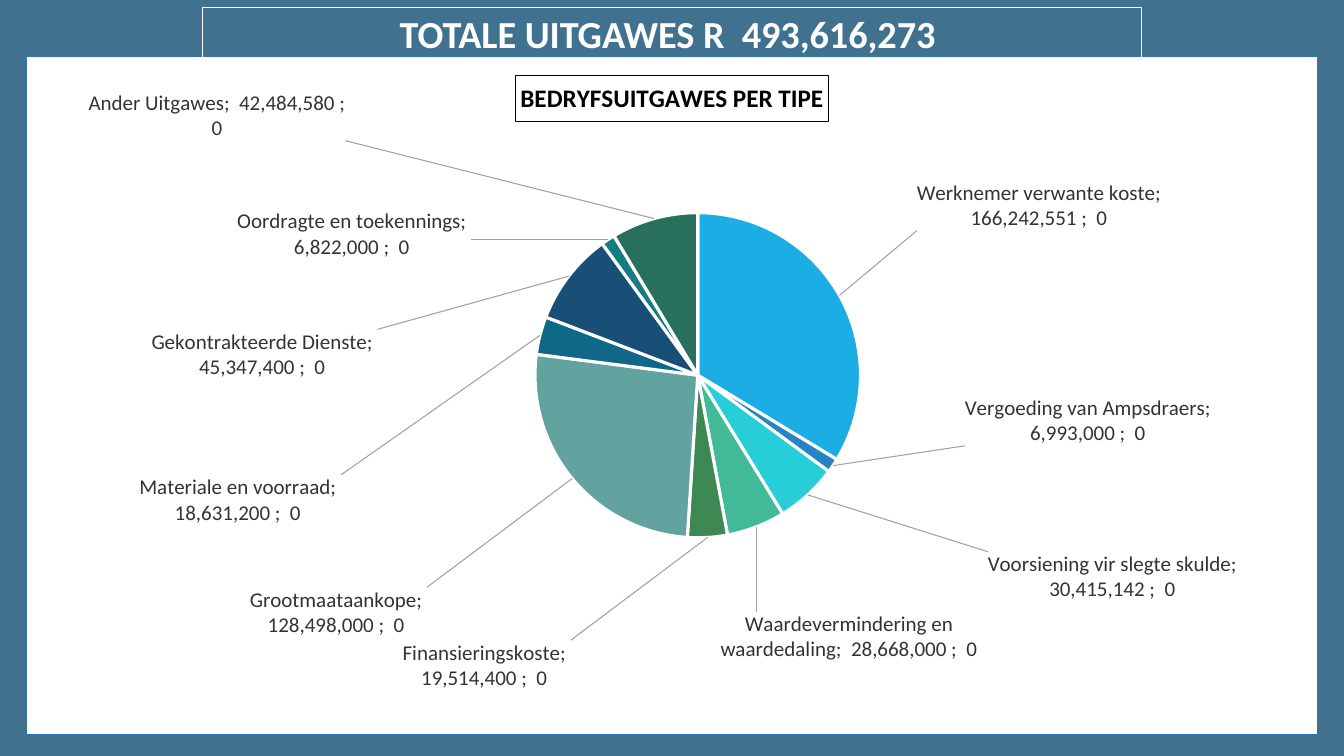
from math import cos, pi, sin

from pptx import Presentation
from pptx.chart.data import CategoryChartData
from pptx.dml.color import RGBColor as Rgb
from pptx.enum.chart import XL_CHART_TYPE as Kind, XL_LABEL_POSITION as Pos
from pptx.enum.shapes import MSO_SHAPE as Shape
from pptx.enum.text import MSO_ANCHOR as Anchor, PP_ALIGN as Align
from pptx.oxml import parse_xml
from pptx.oxml.ns import qn
from pptx.util import Inches, Pt

HEAD = "TOTALE UITGAWES R  493,616,273 "
TITLE = "BEDRYFSUITGAWES PER TIPE"
FONT = "Calibri"
FORMAT = '" "#,##0" "'
COLORS = {"back": "407290", "white": "FFFFFF", "black": "000000",
          "edge": "2E75B6", "label": "333333", "leader": "A0A0A0"}

# name, amount, slice colour, label corner nearest the pie (inches)
COSTS = [
    ("Werknemer verwante koste", 166242551, "1CADE4", (9.04, 2.31)),
    ("Vergoeding van Ampsdraers", 6993000, "2683C6", (9.52, 3.87)),
    ("Voorsiening vir slegte skulde", 30415142, "27CED7", (9.76, 5.41)),
    ("Waardevermindering en waardedaling", 28668000, "42BA97", (7.13, 5.99)),
    ("Finansieringskoste", 19514400, "3E8853", (4.83, 6.27)),
    ("Grootmaataankope", 128498000, "62A39F", (4.3, 5.77)),
    ("Materiale en voorraad", 18631200, "106889", (3.46, 5.22)),
    ("Gekontrakteerde Dienste", 45347400, "174F77", (3.81, 3.8)),
    ("Oordragte en toekennings", 6822000, "177C81", (4.72, 2.62)),
    ("Ander Uitgawes", 42484580, "28705B", (3.45, 1.45)),
]
LEFT, TOP, WIDTH, HEIGHT = 0.26, 0.56, 12.81, 6.73
PLOT = {"x": 0.2, "y": 0.23, "w": 0.64, "h": 0.48}
MID = (6.93, 3.71)
RADIUS = 1.6

NS = ('xmlns:c="http://schemas.openxmlformats.org/drawingml/2006/chart" '
      'xmlns:a="http://schemas.openxmlformats.org/drawingml/2006/main"')


def color(key):
    return Rgb.from_string(COLORS.get(key, key))


def paint(item, fill, line, width):
    item.fill.solid()
    item.fill.fore_color.rgb = color(fill)
    item.line.color.rgb = color(line)
    item.line.width = Pt(width)


def style(font, size, key, bold=False):
    font.name, font.size, font.bold = FONT, Pt(size), bold
    font.color.rgb = color(key)


def outline(key, width):
    return (f'<a:ln w="{Pt(width)}"><a:solidFill><a:srgbClr val="{COLORS[key]}"/>'
            f'</a:solidFill></a:ln>')


def place(x, y):
    return (f'<c:layout><c:manualLayout><c:x val="{x:.4f}"/><c:y val="{y:.4f}"/>'
            f'</c:manualLayout></c:layout>')


def add_head(slide):
    box = slide.shapes.add_shape(Shape.RECTANGLE, Inches(2.01), Inches(0.07),
                                 Inches(9.31), Inches(0.58))
    box.shadow.inherit = False
    box.fill.background()
    box.line.color.rgb = color("white")
    box.line.width = Pt(0.75)
    box.text_frame.vertical_anchor = Anchor.MIDDLE
    para = box.text_frame.paragraphs[0]
    para.text, para.alignment, para.line_spacing = HEAD, Align.CENTER, 0.9
    style(para.font, 27.3, "white", True)


def add_labels(series):
    labels = series.data_labels
    labels.number_format, labels.number_format_is_linked = FORMAT, False
    labels.position = Pos.OUTSIDE_END
    labels.show_value = labels.show_category_name = labels.show_percentage = True
    style(labels.font, 15, "label")
    root = labels._element
    for tag in ("c:separator", "c:showLeaderLines", "c:leaderLines"):
        for old in root.findall(qn(tag)):
            root.remove(old)
    for part in ("<c:separator {}>; </c:separator>",
                 '<c:showLeaderLines {} val="1"/>',
                 "<c:leaderLines {}><c:spPr>" + outline("leader", 0.75)
                 + "</c:spPr></c:leaderLines>"):
        root.append(parse_xml(part.replace("{}", NS)))
    total, done = sum(cost[1] for cost in COSTS), 0
    for i, (_, value, _, (x, y)) in enumerate(COSTS):
        turn = 2 * pi * (done + value / 2) / total
        done += value
        shift = place((x - MID[0] - RADIUS * sin(turn)) / WIDTH,
                      (y - MID[1] + RADIUS * cos(turn)) / HEIGHT)
        root.insert(i, parse_xml(
            f'<c:dLbl {NS}><c:idx val="{i}"/>{shift}<c:dLblPos val="outEnd"/>'
            '<c:showLegendKey val="0"/><c:showVal val="1"/><c:showCatName val="1"/>'
            '<c:showSerName val="0"/><c:showPercent val="1"/>'
            '<c:showBubbleSize val="0"/><c:separator>; </c:separator></c:dLbl>'))


def add_pie(slide):
    data = CategoryChartData(number_format=FORMAT)
    data.categories = [cost[0] for cost in COSTS]
    data.add_series("Uitgawes", [cost[1] for cost in COSTS])
    chart = slide.shapes.add_chart(Kind.PIE, Inches(LEFT), Inches(TOP),
                                   Inches(WIDTH), Inches(HEIGHT), data).chart
    style(chart.font, 10, "black")
    chart.has_legend = False
    chart.has_title = True
    title = chart.chart_title
    para = title.text_frame.paragraphs[0]
    para.text = TITLE
    style(para.font, 18, "black", True)
    paint(title.format, "white", "black", 0.75)
    plot = chart.plots[0]
    plot.vary_by_categories = True
    series = plot.series[0]
    for i, cost in enumerate(COSTS):
        paint(series.points[i].format, cost[2], "white", 2.25)
    add_labels(series)
    area = chart.element.find(".//" + qn("c:plotArea"))
    for old in area.findall(qn("c:layout")):
        area.remove(old)
    sizes = "".join(f'<c:{key} val="{val}"/>' for key, val in PLOT.items())
    area.insert(0, parse_xml(
        f'<c:layout {NS}><c:manualLayout><c:layoutTarget val="inner"/>'
        '<c:xMode val="edge"/><c:yMode val="edge"/>'
        f'{sizes}</c:manualLayout></c:layout>'))
    chart.element.find(qn("c:chart")).addnext(parse_xml(
        f'<c:spPr {NS}><a:solidFill><a:srgbClr val="{COLORS["white"]}"/>'
        f'</a:solidFill>{outline("edge", 0.75)}</c:spPr>'))


def main():
    """Build the slide with total expenditure split by type."""
    deck = Presentation()
    deck.slide_width, deck.slide_height = Inches(13.33), Inches(7.5)
    slide = deck.slides.add_slide(deck.slide_layouts[6])
    slide.background.fill.solid()
    slide.background.fill.fore_color.rgb = color("back")
    add_pie(slide)
    add_head(slide)
    deck.save("out.pptx")


if __name__ == "__main__":
    main()
